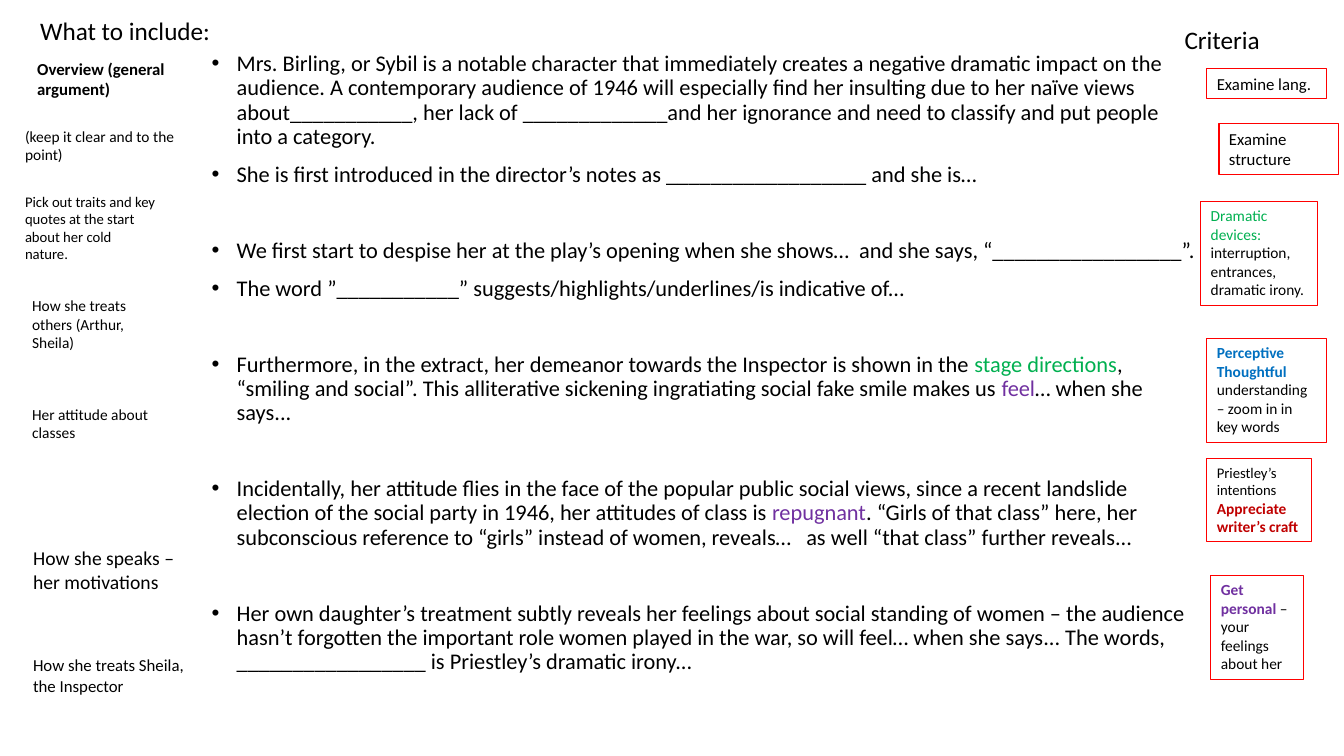
from pptx import Presentation, util as u
from pptx.dml.color import RGBColor
from pptx.enum import shapes, text
from pptx.oxml.ns import qn
from lxml import etree

BLACK, RED, GREEN = "000000", "FF0000", "00B050"
BLUE, PURPLE, WINE = "0070C0", "7030A0", "C00000"


def color(code):
    return RGBColor.from_string(code)


class Page:
    font = "Calibri"

    def __init__(self, deck):
        self.slide = deck.slides.add_slide(deck.slide_layouts[6])

    def style(self, para, parts, size):
        if isinstance(parts, str):
            parts = [(parts,)]
        para.alignment = text.PP_ALIGN.LEFT
        para.text = parts[0][0]
        for words, *_ in parts[1:]:
            para.add_run().text = words
        for run, (_, *look) in zip(para.runs, parts):
            tone, bold, points = look + [BLACK, False, size][len(look):]
            run.font.name = self.font
            run.font.size = u.Pt(points)
            run.font.bold = bold
            run.font.color.rgb = color(tone)

    def fill(self, shape, paras, size):
        frame = shape.text_frame
        frame.word_wrap = True
        frame.vertical_anchor = text.MSO_ANCHOR.TOP
        for i, parts in enumerate(paras):
            para = frame.add_paragraph() if i else frame.paragraphs[0]
            self.style(para, parts, size)
        return frame

    def note(self, box, paras, size):
        shape = self.slide.shapes.add_textbox(*map(u.Inches, box))
        return self.fill(shape, paras, size)

    def card(self, box, paras, size):
        shape = self.slide.shapes.add_shape(
            shapes.MSO_SHAPE.RECTANGLE, *map(u.Inches, box))
        shape.shadow.inherit = False
        shape.fill.background()
        shape.line.color.rgb = color(RED)
        shape.line.width = u.Pt(0.75)
        return self.fill(shape, paras, size)

    def essay(self, box, items, size):
        frame = self.note(box, [parts for _, parts in items], size)
        for para, (gap, _) in zip(frame.paragraphs, items):
            para.line_spacing = 0.9
            para.space_before = u.Pt(gap)
            props = para._p.get_or_add_pPr()
            props.set("marL", str(u.Inches(0.25)))
            props.set("indent", str(-u.Inches(0.25)))
            face = etree.SubElement(props, qn("a:buFont"))
            face.set("typeface", "Arial")
            mark = etree.SubElement(props, qn("a:buChar"))
            mark.set("char", "•")


NEAR, FAR = 10, 37

ESSAY = [
    (NEAR, "Mrs. Birling, or Sybil is a notable character that immediately "
     "creates a negative dramatic impact on the audience. A contemporary "
     "audience of 1946 will especially find her insulting due to her naïve "
     "views about___________, her lack of _____________and her ignorance and "
     "need to classify and put people into a category."),
    (NEAR, "She is first introduced in the director’s notes as "
     "__________________ and she is…"),
    (FAR, "We first start to despise her at the play’s opening when she "
     "shows…  and she says, “_________________”."),
    (NEAR, "The word ”___________” suggests/highlights/underlines/is "
     "indicative of..."),
    (FAR, [
        ("Furthermore, in the extract, her demeanor towards the Inspector is "
         "shown in the ",),
        ("stage directions", GREEN),
        (", “smiling and social”. This alliterative sickening ingratiating "
         "social fake smile makes us",),
        (" feel", PURPLE),
        ("… when she says...",)]),
    (FAR, [
        ("Incidentally, her attitude flies in the face of the popular public "
         "social views, since a recent landslide election of the social party "
         "in 1946, her attitudes of class is ",),
        ("repugnant", PURPLE),
        (". “Girls of that class” here, her subconscious reference to “girls” "
         "instead of women, reveals…   as well “that class” further "
         "reveals...",)]),
    (FAR, "Her own daughter’s treatment subtly reveals her feelings about "
     "social standing of women – the audience hasn’t forgotten the important "
     "role women played in the war, so will feel… when she says... The words, "
     "_________________ is Priestley’s dramatic irony..."),
]

NOTES = [
    ((0.3, 0.1, 2.42, 0.4), "What to include:", 18),
    ((11.65, 0.19, 1.28, 0.4), "Criteria", 18),
    ((0.27, 0.53, 1.69, 0.5),
     [("Overview (general argument)", BLACK, True)], 12),
    ((0.15, 1.21, 1.68, 0.47), "(keep it clear and to the point)", 11),
    ((0.15, 1.86, 1.5, 0.81),
     "Pick out traits and key quotes at the start about her cold nature.",
     10.5),
    ((0.22, 2.89, 1.54, 0.66), "How she treats others (Arthur, Sheila)", 11),
    ((0.22, 3.97, 1.54, 0.47), "Her attitude about classes", 11),
    ((0.23, 5.37, 1.73, 0.57), "How she speaks – her motivations", 14),
    ((0.23, 6.45, 1.83, 0.5), "How she treats Sheila, the Inspector", 12),
]

CARDS = [
    ((11.97, 0.68, 1.19, 0.3), ["Examine lang."], 12),
    ((12.09, 1.23, 1.19, 0.5), ["Examine structure"], 12),
    ((11.91, 2, 1.16, 1.03),
     [[("Dramatic devices: ", GREEN),
       ("interruption, entrances, dramatic irony.",)]], 11),
    ((11.97, 3.36, 1.19, 1.03),
     [[("Perceptive", BLUE, True)], [("Thoughtful", BLUE, True)],
      "understanding – zoom in in key words"], 11),
    ((11.97, 4.55, 1.04, 0.82),
     ["Priestley’s intentions",
      [("Appreciate writer’s craft", WINE, True, 11)]], 10.5),
    ((12.01, 5.71, 0.92, 1.03),
     [[("Get personal ", PURPLE, True), ("– your feelings about her",)]], 11),
]


def main():
    deck = Presentation()
    deck.slide_width = u.Inches(13.33)
    deck.slide_height = u.Inches(7.5)
    page = Page(deck)
    page.essay((2, 0.47, 9.97, 6.89), ESSAY, 16)
    for box, words, size in NOTES:
        page.note(box, [words], size)
    for box, paras, size in CARDS:
        page.card(box, paras, size)
    deck.save("out.pptx")


if __name__ == "__main__":
    main()
